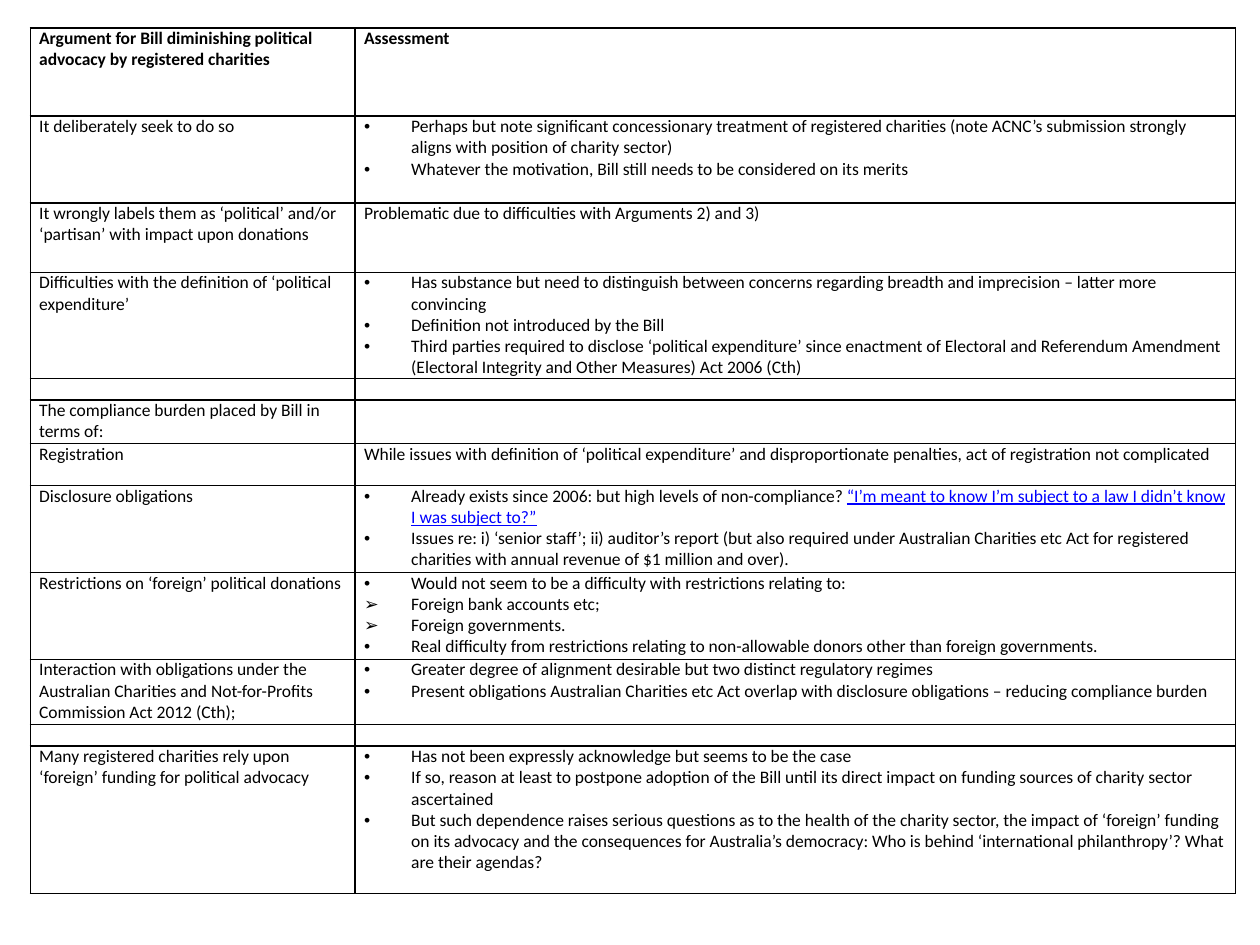
import pptx
import pptx.dml.color
import pptx.oxml
import pptx.oxml.ns
import pptx.util
from pptx.util import Cm

FONT = "Calibri"
SIZE = 10
INK = "000000"
LINK = "0000FF"
MARKS = "•➢"
COLS = [6.55, 17.75]

# Row height in cm, argument, lines of the assessment; "|" starts a link
ROWS = [
    (1.78, "Argument for Bill diminishing political advocacy by registered charities",
     ["Assessment"]),
    (1.75, "It deliberately seek to do so",
     ["•Perhaps but note significant concessionary treatment of registered charities "
      "(note ACNC’s submission strongly aligns with position of charity sector)",
      "•Whatever the motivation, Bill still needs to be considered on its merits"]),
    (1.4, "It wrongly labels them as ‘political’ and/or ‘partisan’ with impact upon donations",
     ["Problematic due to difficulties with Arguments 2) and 3)"]),
    (2.13, "Difficulties with the definition of ‘political expenditure’",
     ["•Has substance but need to distinguish between concerns regarding breadth and "
      "imprecision – latter more convincing",
      "•Definition not introduced by the Bill",
      "•Third parties required to disclose ‘political expenditure’ since enactment of "
      "Electoral and Referendum Amendment (Electoral Integrity and Other Measures) "
      "Act 2006 (Cth)"]),
    (0.43, "", []),
    (0.88, "The compliance burden placed by Bill in terms of:", []),
    (0.85, "Registration",
     ["While issues with definition of ‘political expenditure’ and disproportionate "
      "penalties, act of registration not complicated"]),
    (1.75, "Disclosure obligations",
     ["•Already exists since 2006: but high levels of non-compliance? "
      "|“I’m meant to know I’m subject to a law I didn’t know I was subject to?”",
      "•Issues re: i) ‘senior staff’; ii) auditor’s report (but also required under "
      "Australian Charities etc Act for registered charities with annual revenue of "
      "$1 million and over)."]),
    (1.75, "Restrictions on ‘foreign’ political donations",
     ["•Would not seem to be a difficulty with restrictions relating to:",
      "➢Foreign bank accounts etc;",
      "➢Foreign governments.",
      "•Real difficulty from restrictions relating to non-allowable donors other than "
      "foreign governments."]),
    (1.32, "Interaction with obligations under the Australian Charities and "
     "Not-for-Profits Commission Act 2012 (Cth);",
     ["•Greater degree of alignment desirable but two distinct regulatory regimes",
      "•Present obligations Australian Charities etc Act overlap with disclosure "
      "obligations – reducing compliance burden"]),
    (0.43, "", []),
    (2.97, "Many registered charities rely upon ‘foreign’ funding for political advocacy",
     ["•Has not been expressly acknowledge but seems to be the case",
      "•If so, reason at least to postpone adoption of the Bill until its direct impact "
      "on funding sources of charity sector ascertained",
      "•But such dependence raises serious questions as to the health of the charity "
      "sector, the impact of ‘foreign’ funding on its advocacy and the consequences for "
      "Australia’s democracy: Who is behind ‘international philanthropy’? What are "
      "their agendas?"]),
]


def color(code):
    return pptx.dml.color.RGBColor.from_string(code)


def node(xml):
    space = pptx.oxml.ns.nsdecls("a")
    return pptx.oxml.parse_xml(xml.replace(">", f" {space}>", 1))


def style(run, bold, code=INK):
    font = run.font
    font.name = FONT
    font.size = pptx.util.Pt(SIZE)
    font.bold = bold
    font.color.rgb = color(code)


def bullet(para, mark):
    props = para._p.get_or_add_pPr()
    props.set("marL", str(Cm(0.95)))
    props.set("indent", str(-Cm(0.95)))
    props.append(node('<a:buFont typeface="Arial"></a:buFont>'))
    props.append(node(f'<a:buChar char="{mark}"></a:buChar>'))


def write(para, line, bold):
    if not line:
        # An empty cell keeps the small type so its row stays low
        para._p.append(node(f'<a:endParaRPr sz="{SIZE * 100}">'
                            f'<a:latin typeface="{FONT}"/></a:endParaRPr>'))
        return
    if line[0] in MARKS:
        bullet(para, line[0])
        line = line[1:]
    plain, _, link = line.partition("|")
    para.text = plain
    style(para.runs[0], bold)
    if link:
        run = para.add_run()
        run.text = link
        style(run, bold, LINK)
        run.font.underline = True


def border(cell):
    props = cell._tc.get_or_add_tcPr()
    for side in "LRTB":
        props.append(node(
            f'<a:ln{side} w="{pptx.util.Pt(1)}"><a:solidFill><a:srgbClr val="{INK}"/>'
            f'</a:solidFill></a:ln{side}>'))


def fill_cell(cell, lines, bold):
    cell.margin_left = cell.margin_right = Cm(0.18)
    cell.margin_top = cell.margin_bottom = 0
    border(cell)
    cell.fill.background()
    frame = cell.text_frame
    for i, line in enumerate(lines or [""]):
        para = frame.add_paragraph() if i else frame.paragraphs[0]
        write(para, line, bold)


def add_grid(slide):
    high = sum(row[0] for row in ROWS)
    frame = slide.shapes.add_table(len(ROWS), len(COLS), Cm(0.61), Cm(0.56),
                                   Cm(sum(COLS)), Cm(high))
    table = frame.table
    table.horz_banding = table.first_row = False
    for col, wide in zip(table.columns, COLS):
        col.width = Cm(wide)
    for i, (tall, claim, notes) in enumerate(ROWS):
        table.rows[i].height = Cm(tall)
        fill_cell(table.cell(i, 0), [claim], i == 0)
        fill_cell(table.cell(i, 1), notes, i == 0)


def main():
    deck = pptx.Presentation()
    deck.slide_width = Cm(25.4)
    deck.slide_height = Cm(19.05)
    slide = deck.slides.add_slide(deck.slide_layouts[6])
    add_grid(slide)
    deck.save("out.pptx")


if __name__ == "__main__":
    main()
